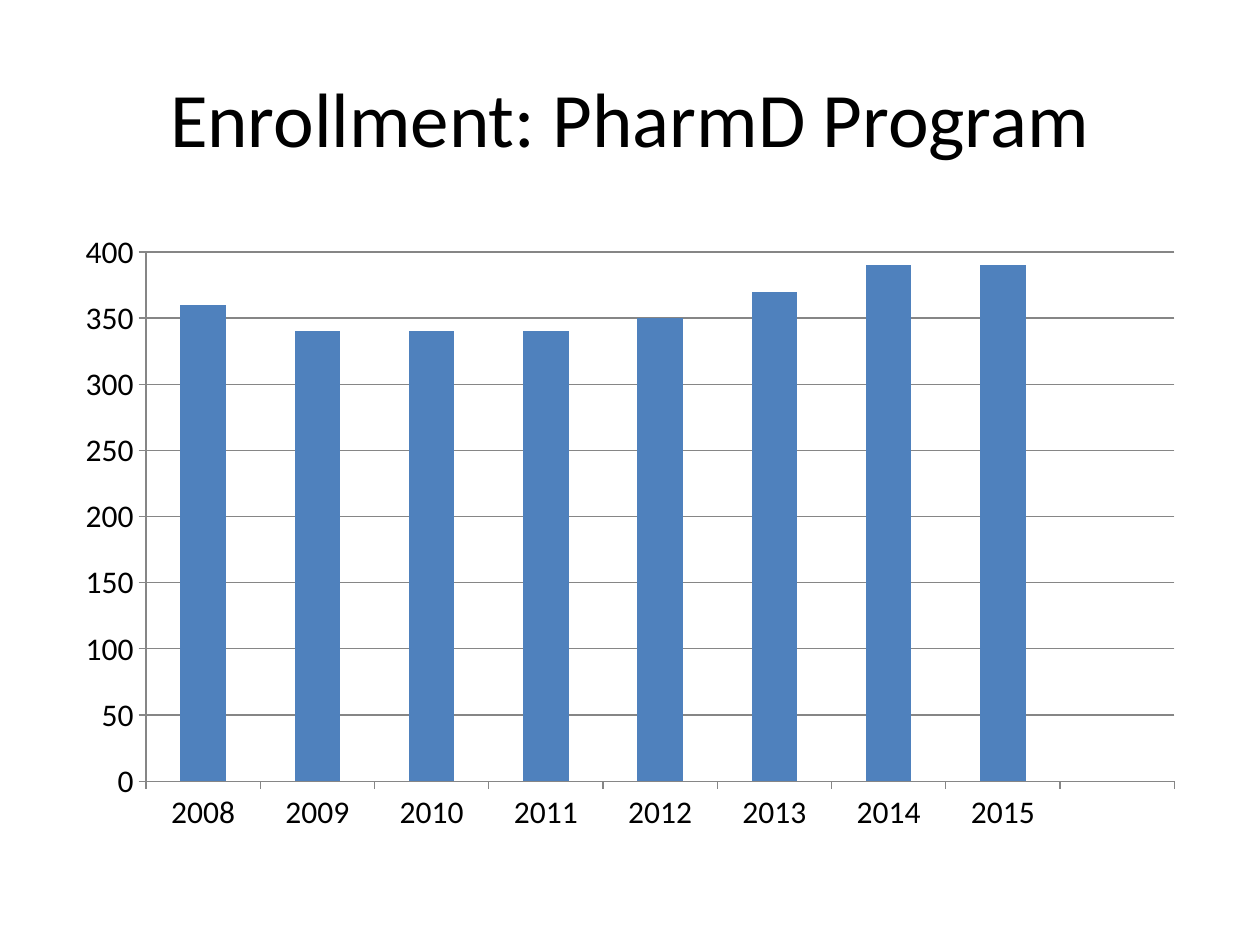
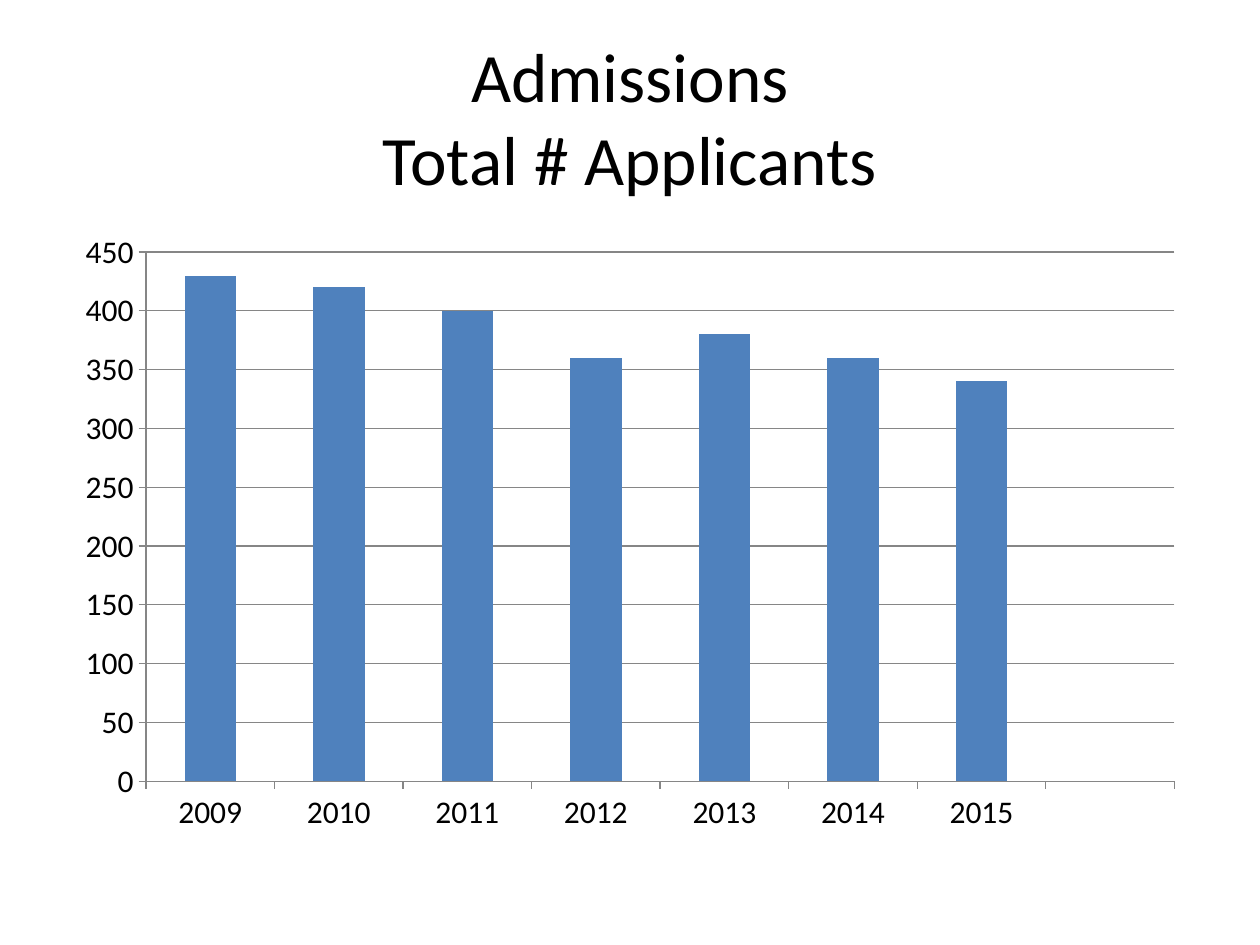
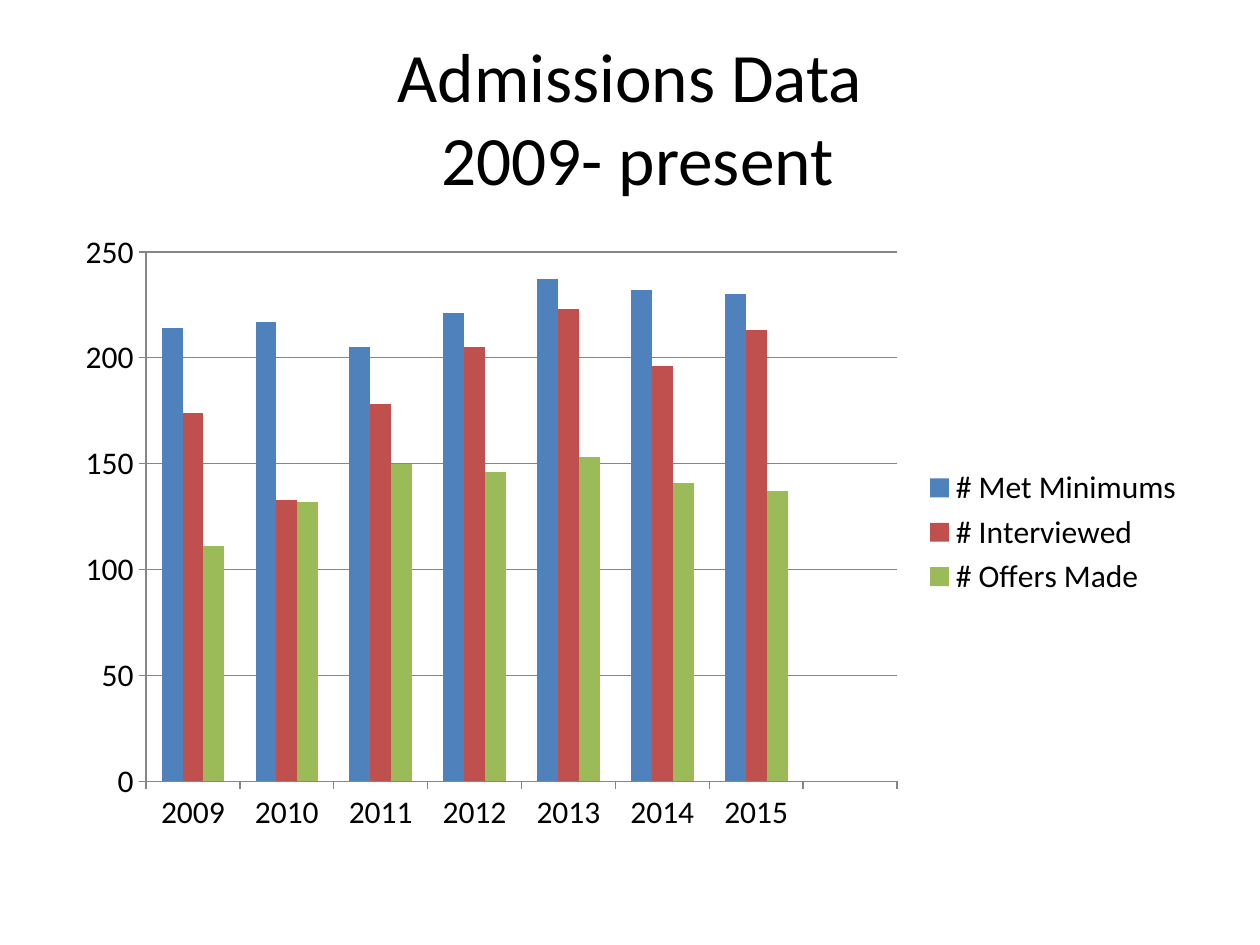
from dataclasses import dataclass

from pptx import Presentation
from pptx import util as u
from pptx.chart.data import CategoryChartData
from pptx.dml.color import RGBColor
from pptx.enum import chart as charts, text


@dataclass(frozen=True)
class Theme:
    font: str = "Calibri"
    ink: RGBColor = RGBColor(0, 0, 0)
    paper: RGBColor = RGBColor(255, 255, 255)
    axis: RGBColor = RGBColor(0x86, 0x86, 0x86)
    series: tuple = tuple(map(RGBColor.from_string, ("4F81BD", "C0504D", "9BBB59")))
    title_size: float = 44
    two_line_title_size: float = 39.6
    chart_size: float = 18
    line_width: float = 0.75


THEME = Theme()
LEFT, WIDTH = u.Inches(0.5), u.Inches(9)


def style_font(font, size):
    font.name = THEME.font
    font.size = u.Pt(size)
    font.color.rgb = THEME.ink


def style_line(line):
    line.color.rgb = THEME.axis
    line.width = u.Pt(THEME.line_width)


def add_page(deck):
    page = deck.slides.add_slide(deck.slide_layouts[6])
    page.background.fill.solid()
    page.background.fill.fore_color.rgb = THEME.paper
    return page


def add_title(page, wording):
    box = page.shapes.add_textbox(LEFT, u.Inches(0.3), WIDTH, u.Inches(1.25))
    frame = box.text_frame
    frame.word_wrap = True
    frame.vertical_anchor = text.MSO_ANCHOR.MIDDLE
    para = frame.paragraphs[0]
    para.text = wording
    para.alignment = text.PP_ALIGN.CENTER
    size = THEME.two_line_title_size if "\n" in wording else THEME.title_size
    style_font(para.font, size)


def style_axes(chart, maximum):
    for axis in (chart.category_axis, chart.value_axis):
        axis.major_tick_mark = charts.XL_TICK_MARK.OUTSIDE
        axis.minor_tick_mark = charts.XL_TICK_MARK.NONE
        style_line(axis.format.line)
    chart.category_axis.has_major_gridlines = False
    scale = chart.value_axis
    scale.minimum_scale = 0
    scale.maximum_scale = maximum
    scale.major_unit = 50
    scale.has_major_gridlines = True
    style_line(scale.major_gridlines.format.line)


def add_column_chart(page, first_year, maximum, series):
    data = CategoryChartData()
    data.categories = [str(year) for year in range(first_year, 2016)] + [""]
    for name, values in series.items():
        data.add_series(name, values + [None])
    chart = page.shapes.add_chart(
        charts.XL_CHART_TYPE.COLUMN_CLUSTERED,
        LEFT, u.Inches(1.75), WIDTH, u.Inches(4.95), data,
    ).chart
    chart.has_title = False
    style_font(chart.font, THEME.chart_size)
    style_axes(chart, maximum)

    plot = chart.plots[0]
    plot.gap_width = 150
    plot.vary_by_categories = False
    for columns, colour in zip(plot.series, THEME.series):
        columns.format.fill.solid()
        columns.format.fill.fore_color.rgb = colour

    chart.has_legend = len(series) > 1
    if chart.has_legend:
        chart.legend.position = charts.XL_LEGEND_POSITION.RIGHT
        chart.legend.include_in_layout = False


def main():
    deck = Presentation()
    deck.slide_width, deck.slide_height = u.Inches(10), u.Inches(7.5)

    enrollment = {"Series 1": [360, 340, 340, 340, 350, 370, 390, 390]}
    applicants = {"Series 1": [430, 420, 400, 360, 380, 360, 340]}
    admissions = {
        "# Met Minimums": [214, 217, 205, 221, 237, 232, 230],
        "# Interviewed": [174, 133, 178, 205, 223, 196, 213],
        "# Offers Made": [111, 132, 150, 146, 153, 141, 137],
    }
    for title, first_year, maximum, series in (
        ("Enrollment: PharmD Program", 2008, 400, enrollment),
        ("Admissions\nTotal # Applicants", 2009, 450, applicants),
        ("Admissions Data\n 2009- present", 2009, 250, admissions),
    ):
        page = add_page(deck)
        add_title(page, title)
        add_column_chart(page, first_year, maximum, series)

    deck.save("out.pptx")


if __name__ == "__main__":
    main()
